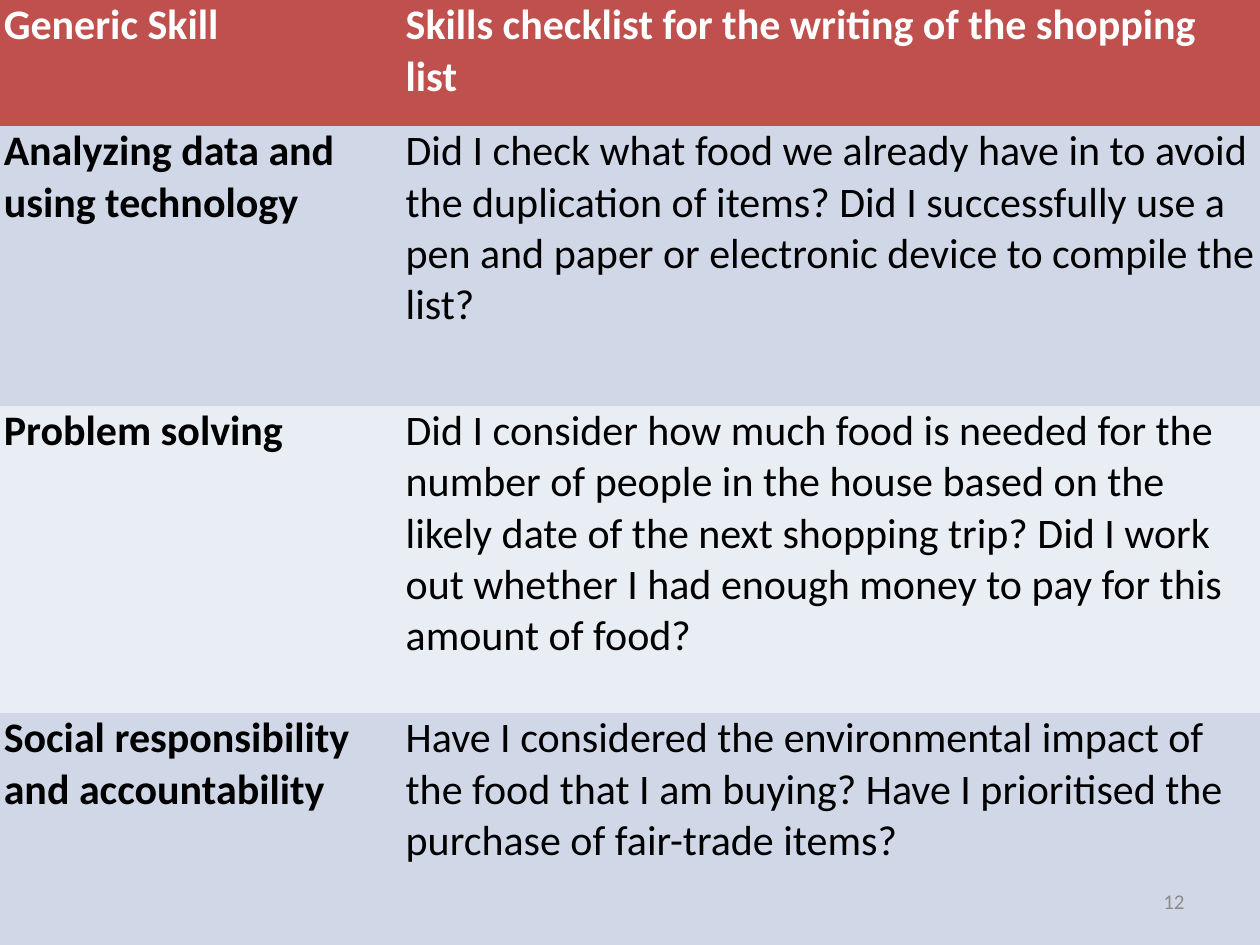
from pptx import Presentation
from pptx import util as u
from pptx.dml.color import RGBColor
from pptx.enum import text as t
from pptx.oxml.ns import qn

HUES = {"head": "C0504D", "odd": "D0D8E8", "even": "E9EDF4",
        "white": "FFFFFF", "black": "000000", "grey": "8C8C8C"}
PLAIN = "{2D5ABB26-0587-4C30-8999-92F81FD0307C}"
COLS = (0.319, 0.681)
ROWS = (1, 2.22, 2.44, 1.84)
SKILLS = [
    ("Generic Skill",
     "Skills checklist for the writing of the shopping list"),
    ("Analyzing data and using technology",
     "Did I check what food we already have in to avoid the duplication of items? "
     "Did I successfully use a pen and paper or electronic device to compile the list?"),
    ("Problem solving",
     "Did I consider how much food is needed for the number of people in the house "
     "based on the likely date of the next shopping trip? "
     "Did I work out whether I had enough money to pay for this amount of food?"),
    ("Social responsibility and accountability",
     "Have I considered the environmental impact of the food that I am buying? "
     "Have I prioritised the purchase of fair-trade items?"),
]


class Deck:
    font = "Calibri"
    wide, high = 10, 7.5

    def __init__(self):
        self.prs = Presentation()
        self.prs.slide_width = u.Inches(self.wide)
        self.prs.slide_height = u.Inches(self.high)
        self.slide = self.prs.slides.add_slide(self.prs.slide_layouts[6])

    def box(self, x, y, w, h):
        return (u.Inches(x * self.wide), u.Inches(y * self.high),
                u.Inches(w * self.wide), u.Inches(h * self.high))

    def add_text(self, para, words, size, hue, bold=False):
        run = para.add_run()
        run.text = words
        run.font.name = self.font
        run.font.size = u.Pt(size)
        run.font.bold = bold
        run.font.color.rgb = RGBColor.from_string(HUES[hue])

    def cell(self, cell, words, fill, hue, bold):
        cell.fill.solid()
        cell.fill.fore_color.rgb = RGBColor.from_string(HUES[fill])
        cell.margin_left = cell.margin_right = u.Inches(0.03)
        cell.margin_top = cell.margin_bottom = 0
        self.add_text(cell.text_frame.paragraphs[0], words, 24, hue, bold)

    def table(self, data, cols, rows):
        frame = self.slide.shapes.add_table(
            len(rows), len(cols), *self.box(0, 0, 1, sum(rows) / self.high))
        grid = frame.table
        grid.horz_banding = False
        grid._tbl.tblPr.find(qn("a:tableStyleId")).text = PLAIN
        for col, share in zip(grid.columns, cols):
            col.width = u.Inches(share * self.wide)
        for i, (row, size, words) in enumerate(zip(grid.rows, rows, data)):
            row.height = u.Inches(size)
            fill = "head" if i == 0 else "odd" if i % 2 else "even"
            hue = "black" if i else "white"
            for j, line in enumerate(words):
                self.cell(row.cells[j], line, fill, hue, i == 0 or j == 0)

    def number(self, words, *area):
        frame = self.slide.shapes.add_textbox(*self.box(*area)).text_frame
        frame.word_wrap = True
        frame.vertical_anchor = t.MSO_ANCHOR.MIDDLE
        para = frame.paragraphs[0]
        para.alignment = t.PP_ALIGN.RIGHT
        self.add_text(para, words, 12, "grey")


def main():
    deck = Deck()
    deck.table(SKILLS, COLS, ROWS)
    deck.number("12", 0.717, 0.927, 0.233, 0.053)
    deck.prs.save("out.pptx")


if __name__ == "__main__":
    main()
